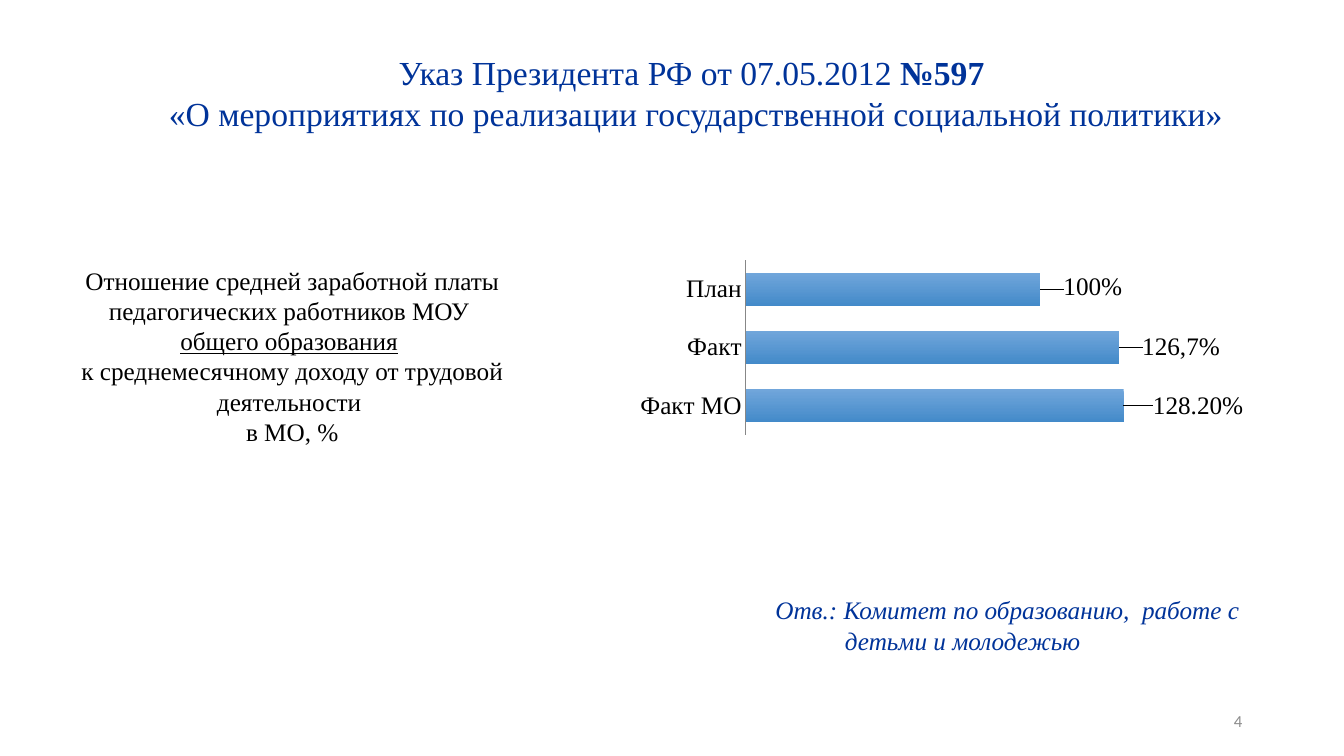
from dataclasses import dataclass

from lxml.etree import SubElement
from pptx import Presentation
from pptx.chart.data import CategoryChartData
from pptx.dml.color import RGBColor
from pptx.enum.chart import XL_CHART_TYPE, XL_LABEL_POSITION, XL_TICK_LABEL_POSITION, XL_TICK_MARK
from pptx.enum.text import MSO_ANCHOR, PP_ALIGN
from pptx.oxml import parse_xml
from pptx.oxml.ns import nsdecls, qn
from pptx.util import Inches, Pt

WIDE, HIGH = Inches(13.33), Inches(7.5)
COLS, ROWS = 40, 30
SERIF, SANS = "Times New Roman", "Calibri"
HUES = {"navy": "003399", "black": "000000", "gray": "8C8C8C",
        "axis": "878787", "light": "71A6DB", "dark": "438AC9"}


@dataclass
class Area:
    col: float
    row: float
    cols: float
    rows: float

    def box(self) -> tuple[int, int, int, int]:
        across, down = WIDE / COLS, HIGH / ROWS
        return (round(self.col * across), round(self.row * down),
                round(self.cols * across), round(self.rows * down))


@dataclass
class Piece:
    text: str
    bold: bool = False
    under: bool = False


@dataclass
class Line:
    pieces: list[Piece]
    indent: float = 0


@dataclass
class Block:
    area: Area
    lines: list[Line]
    size: int
    hue: str
    align: PP_ALIGN
    font: str = SERIF
    slant: bool = False
    anchor: MSO_ANCHOR = MSO_ANCHOR.TOP


@dataclass
class Bar:
    name: str
    value: float
    format: str
    shift: tuple[float, float]
    label: str = ""


BLOCKS = [
    Block(Area(28.27, 27.8, 9, 1.6), [Line([Piece("4")])], 12, "gray",
          PP_ALIGN.RIGHT, font=SANS, anchor=MSO_ANCHOR.MIDDLE),
    Block(Area(2.07, 1.88, 37.27, 3.64), [
        Line([Piece("Указ Президента РФ от 07.05.2012 "), Piece("№597 ", bold=True)]),
        Line([Piece("«О мероприятиях по реализации государственной социальной политики»")]),
    ], 24, "navy", PP_ALIGN.CENTER),
    Block(Area(2.07, 10.32, 13.26, 7.68), [
        Line([Piece("Отношение средней заработной платы педагогических работников МОУ ")]),
        Line([Piece("общего образования", under=True), Piece(" ")]),
        Line([Piece("к среднемесячному доходу от трудовой деятельности ")]),
        Line([Piece("в МО, %")]),
    ], 18, "black", PP_ALIGN.CENTER),
    Block(Area(22.78, 23.4, 15.96, 4.04), [
        Line([Piece("Отв.: Комитет по образованию,  работе с")]),
        Line([Piece("детьми и молодежью")], indent=0.69),
    ], 18, "navy", PP_ALIGN.LEFT, slant=True),
]

BARS = [
    Bar("Факт МО", 1.282, "0.00%", (0.04, 0)),
    Bar("Факт", 1.267, "0.00%", (0.03, 0), "126,7%"),
    Bar("План", 1, "0%", (0.03, -0.01)),
]


def paint(font, size: int, hue: str, face: str) -> None:
    font.size, font.name = Pt(size), face
    font.color.rgb = RGBColor.from_string(HUES[hue])


def write(slide, block: Block) -> None:
    frame = slide.shapes.add_textbox(*block.area.box()).text_frame
    frame.word_wrap = True
    frame.vertical_anchor = block.anchor
    for place, line in enumerate(block.lines):
        para = frame.add_paragraph() if place else frame.paragraphs[0]
        para.alignment = block.align
        if line.indent:
            para._p.get_or_add_pPr().set("marL", str(Inches(line.indent)))
        first, *rest = line.pieces
        para.text = first.text
        for piece in rest:
            para.add_run().text = piece.text
        for run, piece in zip(para.runs, line.pieces):
            paint(run.font, block.size, block.hue, block.font)
            run.font.bold, run.font.underline = piece.bold, piece.under
            run.font.italic = block.slant


def layout(**parts):
    """Build a manual chart layout from its named values."""
    root = parse_xml(f"<c:layout {nsdecls('c')}/>")
    manual = SubElement(root, qn("c:manualLayout"))
    for tag, value in parts.items():
        SubElement(manual, qn(f"c:{tag}")).set("val", str(value))
    return root


def tag(series, place: int, bar: Bar) -> None:
    """Label one bar, moved away from its default spot."""
    label = series.points[place].data_label
    if bar.label:
        label.text_frame.text = bar.label
        paint(label.text_frame.paragraphs[0].runs[0].font, 18, "black", SERIF)
    else:
        paint(label.font, 18, "black", SERIF)
    label.position = XL_LABEL_POSITION.OUTSIDE_END
    node = series.data_labels._element.findall(qn("c:dLbl"))[-1]
    for item in node.findall(qn("c:layout")):
        node.remove(item)
    across, down = bar.shift
    node.insert(1, layout(x=across, y=down))
    if not bar.label:
        node.insert(2, parse_xml(f'<c:numFmt {nsdecls("c")} formatCode="{bar.format}" sourceLinked="0"/>'))


def plot(slide, area: Area, bars: list[Bar]) -> None:
    data = CategoryChartData(number_format="0.00%")
    data.categories = [bar.name for bar in bars]
    data.add_series("Series 1", [bar.value for bar in bars])
    chart = slide.shapes.add_chart(XL_CHART_TYPE.BAR_CLUSTERED, *area.box(), data).chart
    chart.has_legend = chart.has_title = False
    paint(chart.font, 18, "black", SANS)

    root = chart._chartSpace.chart.plotArea
    for item in root.findall(qn("c:layout")):
        root.remove(item)
    root.insert(0, layout(layoutTarget="inner", xMode="edge", yMode="edge",
                          x=0.197, y=0.108, w=0.647, h=0.639))

    scale = chart.value_axis
    scale.minimum_scale, scale.maximum_scale = 0, 1.4
    scale.has_major_gridlines = scale.visible = False
    names = chart.category_axis
    names.major_tick_mark = names.minor_tick_mark = XL_TICK_MARK.NONE
    names.tick_label_position = XL_TICK_LABEL_POSITION.NEXT_TO_AXIS
    names.format.line.color.rgb = RGBColor.from_string(HUES["axis"])
    names.format.line.width = Pt(0.75)
    paint(names.tick_labels.font, 18, "black", SERIF)

    group = chart.plots[0]
    group.gap_width, group.vary_by_categories = 75, False
    series = group.series[0]
    fill = series.format.fill
    fill.gradient()
    fill.gradient_angle = 270
    for stop, hue in zip(fill.gradient_stops, ("light", "dark")):
        stop.color.rgb = RGBColor.from_string(HUES[hue])
    labels = series.data_labels
    labels.show_value = True
    labels.number_format, labels.number_format_is_linked = "0.00%", False
    paint(labels.font, 18, "black", SERIF)
    for place, bar in enumerate(bars):
        tag(series, place, bar)


def main() -> None:
    deck = Presentation()
    deck.slide_width, deck.slide_height = WIDE, HIGH
    slide = deck.slides.add_slide(deck.slide_layouts[6])
    for block in BLOCKS:
        write(slide, block)
    plot(slide, Area(18.45, 9.16, 18.99, 10.84), BARS)
    deck.save("out.pptx")


if __name__ == "__main__":
    main()
